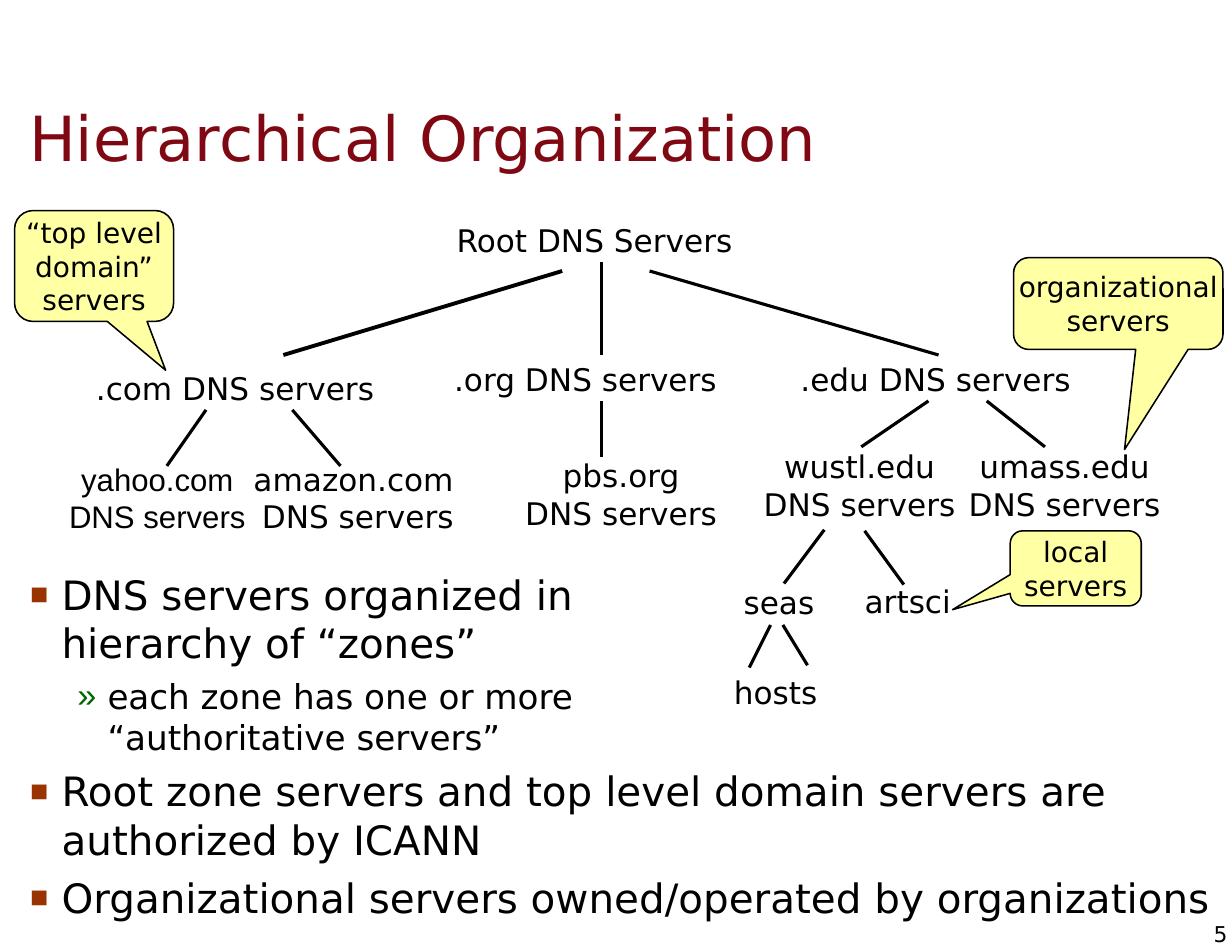
from lxml import etree
from pptx import Presentation
from pptx.dml.color import RGBColor
from pptx.enum.shapes import MSO_CONNECTOR, MSO_SHAPE
from pptx.enum.text import MSO_ANCHOR, MSO_AUTO_SIZE, PP_ALIGN
from pptx.oxml.ns import qn
from pptx.util import Inches, Pt

BLACK = RGBColor(0x00, 0x00, 0x00)
MAROON = RGBColor(0x7F, 0x08, 0x13)
YELLOW = RGBColor(0xFF, 0xFF, 0xA3)
BROWN = RGBColor(0x99, 0x33, 0x00)
GREEN = RGBColor(0x00, 0x66, 0x00)
FONT = "DejaVu Sans"
LEFT, CENTER, RIGHT = PP_ALIGN.LEFT, PP_ALIGN.CENTER, PP_ALIGN.RIGHT
TOP, MIDDLE = MSO_ANCHOR.TOP, MSO_ANCHOR.MIDDLE
NO_FIT = MSO_AUTO_SIZE.NONE
CALLOUT = MSO_SHAPE.ROUNDED_RECTANGULAR_CALLOUT
STRAIGHT = MSO_CONNECTOR.STRAIGHT


def write(p, lines, size, color=BLACK, font=FONT):
    """Add lines to a paragraph, one run each, with line breaks between."""
    for i, line in enumerate(lines):
        if i:
            p.add_line_break()
        r = p.add_run()
        r.text = line
        r.font.size = Pt(size)
        r.font.name = font
        r.font.color.rgb = color


def set_frame(tf, anchor, x_inset, y_inset, wrap=True):
    tf.auto_size = NO_FIT
    tf.word_wrap = wrap
    tf.vertical_anchor = anchor
    tf.margin_left = tf.margin_right = Inches(x_inset)
    tf.margin_top = tf.margin_bottom = Inches(y_inset)


prs = Presentation()
prs.slide_width, prs.slide_height = Inches(11), Inches(8.5)
s = prs.slides.add_slide(prs.slide_layouts[1])

# Title
title = s.shapes.title
title.left, title.top = Inches(0.15), Inches(0.7)
title.width, title.height = Inches(10.53), Inches(1.04)
set_frame(title.text_frame, MIDDLE, 0.11, 0.06)
p = title.text_frame.paragraphs[0]
p.alignment = LEFT
write(p, ["Hierarchical Organization"], 40, MAROON)

# Bulleted list; each level: bullet, colour, bullet %, margin, indent, size, space before
levels = [
    ("■", BROWN, 75, 0.42, -0.28, 26, 6),
    ("»", GREEN, 100, 0.83, -0.27, 22, 5),
]
items = [
    (0, ["DNS servers organized in", "hierarchy of “zones”"]),
    (1, ["each zone has one or more", "“authoritative servers”"]),
    (0, ["Root zone servers and top level domain servers are authorized by ICANN"]),
    (0, ["Organizational servers owned/operated by organizations"]),
]
body = s.placeholders[1]
body.left, body.top = Inches(0.02), Inches(5.03)
body.width, body.height = Inches(10.98), Inches(3.47)
tf = body.text_frame
set_frame(tf, TOP, 0.11, 0.06)
for i, (level, lines) in enumerate(items):
    bullet, color, percent, margin, indent, size, space = levels[level]
    p = tf.add_paragraph() if i else tf.paragraphs[0]
    p.level = level
    pPr = p._p.get_or_add_pPr()
    pPr.set("marL", str(Inches(margin)))
    pPr.set("indent", str(Inches(indent)))
    bu_color = etree.SubElement(pPr, qn("a:buClr"))
    etree.SubElement(bu_color, qn("a:srgbClr"), val=str(color))
    etree.SubElement(pPr, qn("a:buSzPct"), val=str(percent * 1000))
    etree.SubElement(pPr, qn("a:buFont"), typeface="Arial")
    etree.SubElement(pPr, qn("a:buChar"), char=bullet)
    p.space_before = Pt(space if i else 0)
    write(p, lines, size)

# Callouts: left, top, width, height, pointer x and y, paragraphs
callouts = [
    (0.13, 1.88, 1.42, 0.99, 0.45, 0.94, ["“top level domain”", "servers"]),
    (9.05, 2.3, 1.87, 0.82, 0.03, 1.59, ["organizational", "servers"]),
    (9.02, 4.74, 1.17, 0.67, -0.94, 0.55, ["local", "servers"]),
]
for x, y, w, h, tip_x, tip_y, texts in callouts:
    sp = s.shapes.add_shape(CALLOUT, Inches(x), Inches(y), Inches(w), Inches(h))
    sp.adjustments[0], sp.adjustments[1] = tip_x, tip_y
    sp.shadow.inherit = False
    sp.fill.solid()
    sp.fill.fore_color.rgb = YELLOW
    sp.line.color.rgb = BLACK
    sp.line.width = Pt(1)
    tf = sp.text_frame
    set_frame(tf, MIDDLE, 0, 0)
    for i, text in enumerate(texts):
        p = tf.add_paragraph() if i else tf.paragraphs[0]
        p.alignment = CENTER
        write(p, [text], 18)

# Names in the DNS tree: left, top, width, alignment, font, paragraphs
nodes = [
    (3.91, 1.93, 2.73, RIGHT, FONT, ["Root DNS Servers"]),
    (0.7, 3.25, 2.74, RIGHT, FONT, [".com DNS servers"]),
    (3.89, 3.17, 2.61, RIGHT, FONT, [".org DNS servers"]),
    (6.99, 3.17, 2.67, RIGHT, FONT, [".edu DNS servers"]),
    (0.51, 4.06, 1.79, CENTER, "Arial", ["yahoo.com", "DNS servers"]),
    (2.15, 4.06, 2, RIGHT, FONT, ["amazon.com", "DNS servers"]),
    (4.57, 4.03, 1.95, CENTER, FONT, ["pbs.org", "DNS servers"]),
    (6.7, 3.95, 1.95, CENTER, FONT, ["wustl.edu", "DNS servers"]),
    (8.53, 3.95, 1.95, CENTER, FONT, ["umass.edu", "DNS servers"]),
    (6.54, 5.16, 0.83, CENTER, FONT, ["seas"]),
    (7.62, 5.15, 0.97, CENTER, FONT, ["artsci"]),
    (6.45, 5.96, 0.95, CENTER, FONT, ["hosts"]),
]
for x, y, w, align, font, texts in nodes:
    h = 0.11 + 0.33 * len(texts)
    sp = s.shapes.add_textbox(Inches(x), Inches(y), Inches(w), Inches(h))
    tf = sp.text_frame
    set_frame(tf, TOP, 0.1, 0.05, wrap=False)
    for i, text in enumerate(texts):
        p = tf.add_paragraph() if i else tf.paragraphs[0]
        p.alignment = align
        write(p, [text], 20, font=font)

# Branches of the tree: x1, y1, x2, y2, width
branches = [
    (5.02, 2.42, 2.53, 3.17, 2.5),
    (5.37, 2.34, 5.37, 3.17, 2),
    (5.8, 2.42, 8.38, 3.17, 2),
    (1.84, 3.66, 1.49, 4.16, 2),
    (2.61, 3.66, 3.04, 4.16, 2),
    (5.37, 3.58, 5.37, 4.08, 2),
    (8.29, 3.58, 7.69, 3.99, 2),
    (8.81, 3.58, 9.33, 3.99, 2),
    (7.36, 4.73, 7, 5.21, 2),
    (7.72, 4.74, 8.07, 5.22, 2),
    (6.88, 5.58, 6.69, 5.96, 2),
    (6.99, 5.58, 7.21, 5.94, 2),
]
for x1, y1, x2, y2, width in branches:
    line = s.shapes.add_connector(STRAIGHT, Inches(x1), Inches(y1), Inches(x2), Inches(y2))
    line.line.color.rgb = BLACK
    line.line.width = Pt(width)
    etree.SubElement(line._element.spPr, qn("a:effectLst"))

# Page number
sp = s.shapes.add_textbox(Inches(10.62), Inches(8.22), Inches(0.34), Inches(0.24))
set_frame(sp.text_frame, MIDDLE, 0, 0, wrap=False)
p = sp.text_frame.paragraphs[0]
p.alignment = RIGHT
write(p, ["5"], 14)

prs.save("out.pptx")
